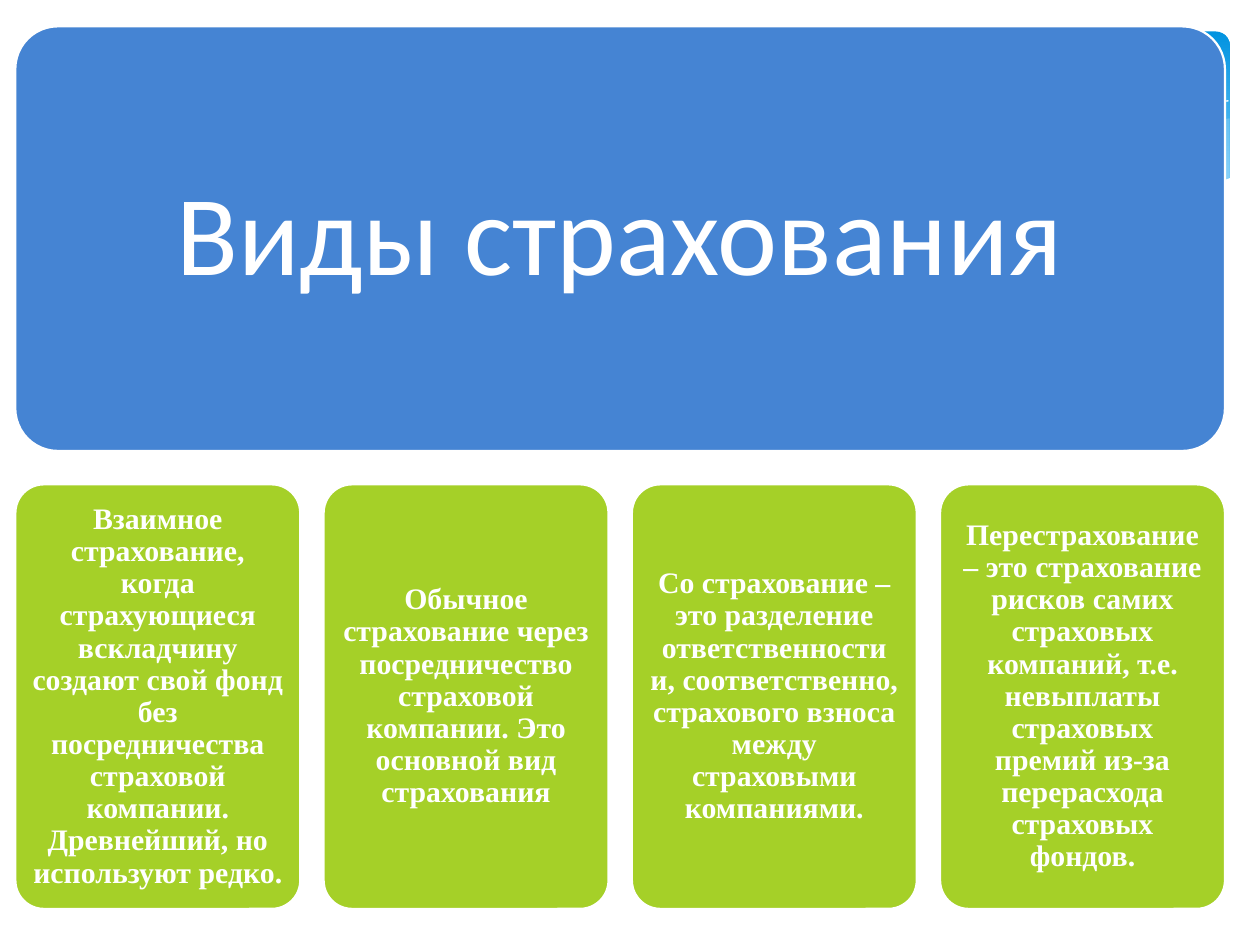
from dataclasses import dataclass

from lxml import etree
from pptx import Presentation
from pptx.dml.color import RGBColor
from pptx.enum.shapes import MSO_SHAPE
from pptx.enum.text import MSO_ANCHOR, PP_ALIGN
from pptx.oxml.ns import qn
from pptx.util import Pt

ROUNDED = MSO_SHAPE.ROUNDED_RECTANGLE
CENTER = PP_ALIGN.CENTER
MIDDLE = MSO_ANCHOR.MIDDLE


@dataclass(frozen=True)
class Theme:
    white: RGBColor = RGBColor.from_string("FFFFFF")
    blue: RGBColor = RGBColor.from_string("4584D3")
    green: RGBColor = RGBColor.from_string("A5D028")
    sky_top: RGBColor = RGBColor.from_string("0293E0")
    sky_bottom: RGBColor = RGBColor.from_string("83D3FE")
    mist: RGBColor = RGBColor.from_string("C6E7FC")
    title_size: int = 65
    card_size: int = 17
    title_font: str = "Calibri"
    card_font: str = "Times New Roman"


THEME = Theme()
UNITS = 100  # freeform units in a point

prs = Presentation()
prs.slide_width, prs.slide_height = Pt(720), Pt(540)
slide = prs.slides.add_slide(prs.slide_layouts[6])
shapes = slide.shapes


def add_outline(points, closed):
    """Draw a freeform through points given in pt."""
    scaled = [(round(x * UNITS), round(y * UNITS)) for x, y in points]
    builder = shapes.build_freeform(*scaled[0], scale=Pt(1) / UNITS)
    builder.add_line_segments(scaled[1:], close=closed)
    outline = builder.convert_to_shape()
    outline.shadow.inherit = False
    return outline


def add_panel(box, color, text, inset, font, size, bold):
    panel = shapes.add_shape(ROUNDED, *(Pt(v) for v in box))
    panel.shadow.inherit = False
    panel.adjustments[0] = 0.1
    panel.fill.solid()
    panel.fill.fore_color.rgb = color
    panel.line.color.rgb = THEME.white
    panel.line.width = Pt(1.25)

    frame = panel.text_frame
    frame.text = text
    frame.word_wrap = True
    frame.vertical_anchor = MIDDLE
    frame.margin_left = frame.margin_right = Pt(inset)
    frame.margin_top = frame.margin_bottom = Pt(inset)
    paragraph = frame.paragraphs[0]
    paragraph.alignment = CENTER
    paragraph.line_spacing = 0.9
    run_font = paragraph.runs[0].font
    run_font.name = font
    run_font.size = Pt(size)
    run_font.bold = bold
    run_font.color.rgb = THEME.white


# Sky banner with waves behind the panels
sky = shapes.add_shape(ROUNDED, Pt(18), Pt(18), Pt(684.7), Pt(112.3))
sky.shadow.inherit = False
sky.adjustments[0] = 0.071
sky.line.fill.background()
sky.fill.gradient()
sky.fill.gradient_angle = 270
sky_stops = ((0, THEME.sky_top), (0.9, THEME.sky_bottom))
for stop, (position, color) in zip(sky.fill.gradient_stops, sky_stops):
    stop.position = position
    stop.color.rgb = color

swoosh = add_outline([
    (702, 67.7), (682.6, 71.3), (663.1, 74.9), (641.5, 79.2), (619.9, 85),
    (579.6, 94.3), (542.2, 103), (508.3, 109.4), (475.9, 115.2),
    (507.6, 118.8), (536.4, 122.4), (562.3, 123.8), (601.2, 123.8),
    (627.8, 121.7), (651.6, 117.4), (673.2, 112.3), (693.4, 105.8),
    (702.7, 101.5), (702.7, 67.7),
], closed=True)
swoosh.line.fill.background()
swoosh.fill.solid()
swoosh.fill.fore_color.rgb = THEME.mist
swoosh_color = swoosh.fill._xPr.find(qn("a:solidFill"))[0]
etree.SubElement(swoosh_color, qn("a:alpha")).set("val", "29000")

crest = add_outline([
    (441.4, 108.7), (470.2, 101.5), (500.4, 93.6), (538.6, 84.2),
    (580.3, 74.9), (623.5, 67), (655.2, 61.9), (684.7, 59), (702, 57.6),
], closed=False)
crest.fill.background()
crest.line.color.rgb = THEME.white
crest.line.width = Pt(0)

wave = add_outline([
    (703.4, 101.5), (684, 108.7), (662.4, 114.5), (638.6, 119.5),
    (612, 122.4), (582.5, 123.1), (547.9, 122.4), (509.8, 118.8),
    (466.6, 112.3), (416.9, 103.7), (362.2, 92.2), (321.8, 82.1),
    (281.5, 73.4), (244.8, 66.2), (210.2, 61.2), (180, 58.3), (139, 56.2),
    (105.1, 56.9), (76.3, 59.8), (54.7, 64.1), (37.4, 69.1), (25.9, 73.4),
    (16.6, 77), (16.6, 161), (703.4, 161),
], closed=True)
wave.line.fill.background()
wave.fill.solid()
wave.fill.fore_color.rgb = THEME.white

# Title panel above a row of four cards
LEFT, WIDTH, HEIGHT = 8.8, 691.2, 242.6
TITLE_TOP, CARDS_TOP = 15.1, 276.8
CARD_WIDTH = 162.8

insurance_kinds = [
    "Взаимное страхование, когда страхующиеся вскладчину создают свой фонд "
    "без посредничества страховой компании. Древнейший, но используют редко.",
    "Обычное страхование через посредничество страховой компании. "
    "Это основной вид страхования",
    "Со страхование – это разделение ответственности и, соответственно, "
    "страхового взноса между страховыми компаниями.",
    "Перестрахование – это страхование рисков самих страховых компаний, т.е. "
    "невыплаты страховых премий из-за перерасхода страховых фондов.",
]
card_step = (WIDTH - CARD_WIDTH) / (len(insurance_kinds) - 1)

add_panel((LEFT, TITLE_TOP, WIDTH, HEIGHT), THEME.blue, "Виды страхования",
          19.5, THEME.title_font, THEME.title_size, False)
for index, kind in enumerate(insurance_kinds):
    card_box = (LEFT + index * card_step, CARDS_TOP, CARD_WIDTH, HEIGHT)
    add_panel(card_box, THEME.green, kind,
              5, THEME.card_font, THEME.card_size, True)

prs.save("out.pptx")
